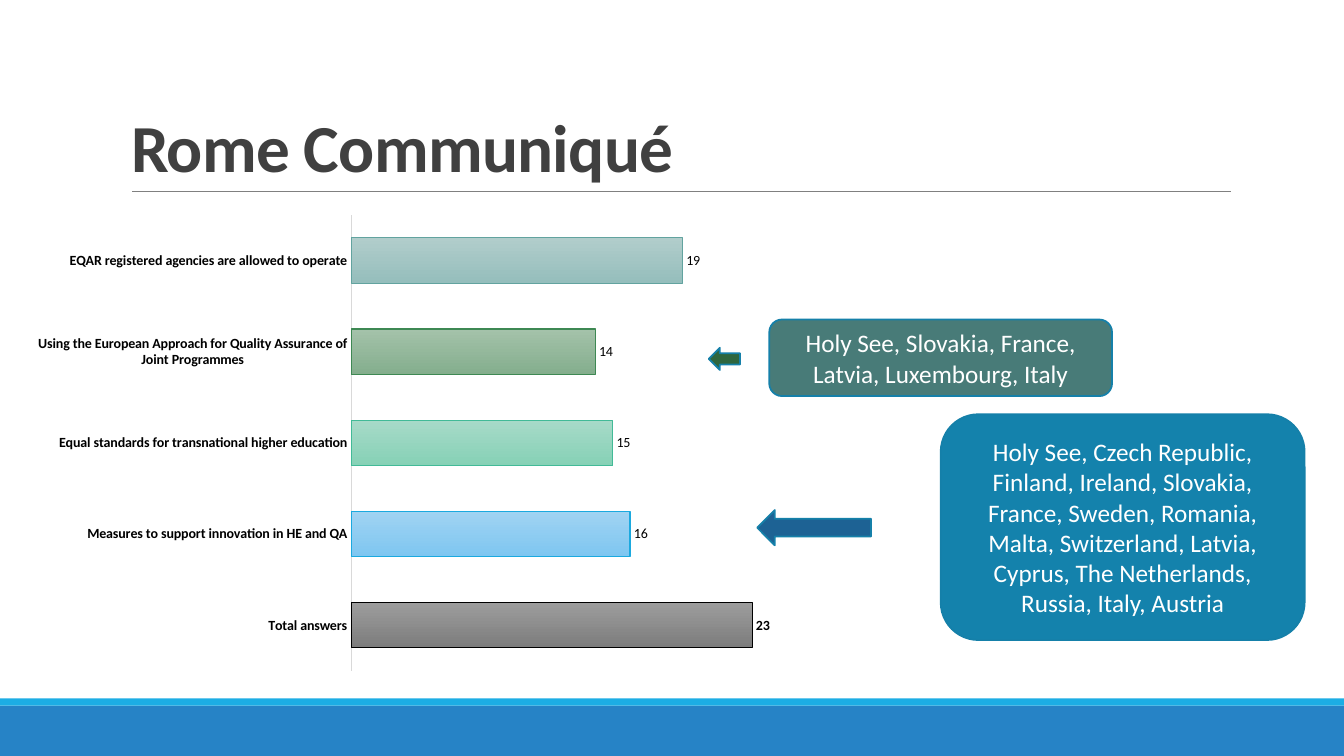
from lxml.etree import SubElement
from pptx import Presentation
from pptx.chart.data import CategoryChartData
from pptx.dml.color import RGBColor
from pptx.enum.chart import XL_CHART_TYPE, XL_LABEL_POSITION, XL_TICK_MARK
from pptx.enum.shapes import MSO_CONNECTOR, MSO_SHAPE
from pptx.enum.text import MSO_ANCHOR, PP_ALIGN
from pptx.oxml import parse_xml
from pptx.oxml.ns import nsdecls, qn
from pptx.util import Inches, Pt

FONT = "Calibri"
COLORS = {
    "band": "2683C6", "stripe": "1CADE4", "rule": "808080", "title": "404040",
    "outline": "1580A9", "teal": "487B78", "blue": "1482AC",
    "blue_arrow": "1D6294", "green_arrow": "2F663E",
    "white": "FFFFFF", "black": "000000", "axis": "D9D9D9",
}
BARS = [
    ("Total answers", 23, "9D9D9D", "7C7C7C", "000000"),
    ("Measures to support innovation in HE and QA", 16, "A0D3F2", "7EC6F1", "1BA9DF"),
    ("Equal standards for transnational higher education", 15, "A7DAC8", "86D1B6", "42BA97"),
    ("Using the European Approach for Quality Assurance of Joint Programmes", 14,
     "A4C2AA", "84AE8D", "3E8853"),
    ("EQAR registered agencies are allowed to operate", 19, "B1CDCB", "95BEBC", "62A39F"),
]


def rgb(name):
    return RGBColor.from_string(COLORS.get(name, name))


def set_font(font, size, color, bold=False):
    font.name = FONT
    font.size = Pt(size)
    font.bold = bold
    font.color.rgb = rgb(color)


def add_block(s, kind, box, fill, outline=None):
    sp = s.shapes.add_shape(kind, *map(Inches, box))
    sp.shadow.inherit = False
    sp.fill.solid()
    sp.fill.fore_color.rgb = rgb(fill)
    if outline:
        sp.line.color.rgb = rgb(outline)
        sp.line.width = Pt(1.25)
    else:
        sp.line.fill.background()
    return sp


def add_footer(s, box):
    left, top, width, height = box
    stripe = 0.07
    add_block(s, MSO_SHAPE.RECTANGLE, (left, top + stripe, width, height - stripe), "band")
    add_block(s, MSO_SHAPE.RECTANGLE, (left, top, width, stripe), "stripe")


def add_title(s, box, text):
    left, top, width, height = box
    bottom = top + height
    sp = s.shapes.title
    sp.left, sp.top, sp.width, sp.height = map(Inches, box)
    tf = sp.text_frame
    tf.vertical_anchor = MSO_ANCHOR.BOTTOM
    p = tf.paragraphs[0]
    p.alignment = PP_ALIGN.LEFT
    p.line_spacing = 0.85
    r = p.add_run()
    r.text = text
    set_font(r.font, 48, "title", True)
    r._r.get_or_add_rPr().set("spc", "-50")
    rule = s.shapes.add_connector(
        MSO_CONNECTOR.STRAIGHT, Inches(left + 0.11), Inches(bottom),
        Inches(left + width + 0.01), Inches(bottom))
    rule.line.color.rgb = rgb("rule")
    rule.line.width = Pt(0.5)
    SubElement(rule._element.spPr, qn("a:effectLst"))


def add_callout(s, box, fill, text, arrow_box, arrow_fill):
    sp = add_block(s, MSO_SHAPE.ROUNDED_RECTANGLE, box, fill, "outline")
    tf = sp.text_frame
    tf.word_wrap = True
    tf.vertical_anchor = MSO_ANCHOR.MIDDLE
    p = tf.paragraphs[0]
    p.text = text
    p.alignment = PP_ALIGN.CENTER
    set_font(p.font, 18, "white")
    add_block(s, MSO_SHAPE.LEFT_ARROW, arrow_box, arrow_fill, "outline")


def set_plot_area(chart, x, y, w, h):
    area = chart._chartSpace.find(".//" + qn("c:plotArea"))
    for old in area.findall(qn("c:layout")):
        area.remove(old)
    area.insert(0, parse_xml(
        f'<c:layout {nsdecls("c")}><c:manualLayout><c:layoutTarget val="inner"/>'
        '<c:xMode val="edge"/><c:yMode val="edge"/>'
        f'<c:x val="{x}"/><c:y val="{y}"/><c:w val="{w}"/><c:h val="{h}"/>'
        '</c:manualLayout></c:layout>'))


def add_answers_chart(s, box):
    data = CategoryChartData()
    data.categories = [bar[0] for bar in BARS]
    data.add_series("Series 1", [bar[1] for bar in BARS])
    chart = s.shapes.add_chart(XL_CHART_TYPE.BAR_CLUSTERED, *map(Inches, box), data).chart
    chart.has_legend = False
    chart.has_title = False
    set_font(chart.font, 10, "black", True)
    set_plot_area(chart, 0.42, 0.02, 0.56, 0.96)

    axis = chart.category_axis
    axis.major_tick_mark = axis.minor_tick_mark = XL_TICK_MARK.NONE
    axis.format.line.color.rgb = rgb("axis")
    axis.format.line.width = Pt(0.75)
    set_font(axis.tick_labels.font, 10, "black", True)
    values = chart.value_axis
    values.minimum_scale = 0
    values.maximum_scale = 25
    values.has_major_gridlines = False
    values.visible = False

    plot = chart.plots[0]
    plot.gap_width = 100
    plot.vary_by_categories = False
    series = plot.series[0]
    series.data_labels.show_value = True
    series.data_labels.position = XL_LABEL_POSITION.OUTSIDE_END
    set_font(series.data_labels.font, 10, "black")
    total = series.points[0].data_label
    set_font(total.font, 10, "black", True)
    total.position = XL_LABEL_POSITION.OUTSIDE_END

    for i, (_, _, start, end, outline) in enumerate(BARS):
        bar = series.points[i].format
        bar.fill.gradient()
        bar.fill.gradient_angle = 270
        for stop, color in zip(bar.fill.gradient_stops, (start, end)):
            stop.color.rgb = rgb(color)
        bar.line.color.rgb = rgb(outline)
        bar.line.width = Pt(0.75)


def main():
    prs = Presentation()
    prs.slide_width = Inches(13.33)
    prs.slide_height = Inches(7.5)
    s = prs.slides.add_slide(prs.slide_layouts[5])
    add_footer(s, (0, 6.93, 13.33, 0.57))
    add_title(s, (1.2, 0.31, 11, 1.59), "Rome Communiqué")
    add_callout(s, (7.63, 3.17, 3.4, 0.76), "teal",
                "Holy See, Slovakia, France, Latvia, Luxembourg, Italy",
                (7.03, 3.45, 0.31, 0.22), "green_arrow")
    add_callout(s, (9.33, 4.11, 3.61, 2.24), "blue",
                "Holy See, Czech Republic, Finland, Ireland, Slovakia, France, Sweden, "
                "Romania, Malta, Switzerland, Latvia, Cyprus, The Netherlands, Russia, "
                "Italy, Austria",
                (7.51, 5.06, 1.13, 0.35), "blue_arrow")
    add_answers_chart(s, (0.24, 2.04, 7.72, 4.71))
    prs.save("out.pptx")


if __name__ == "__main__":
    main()
